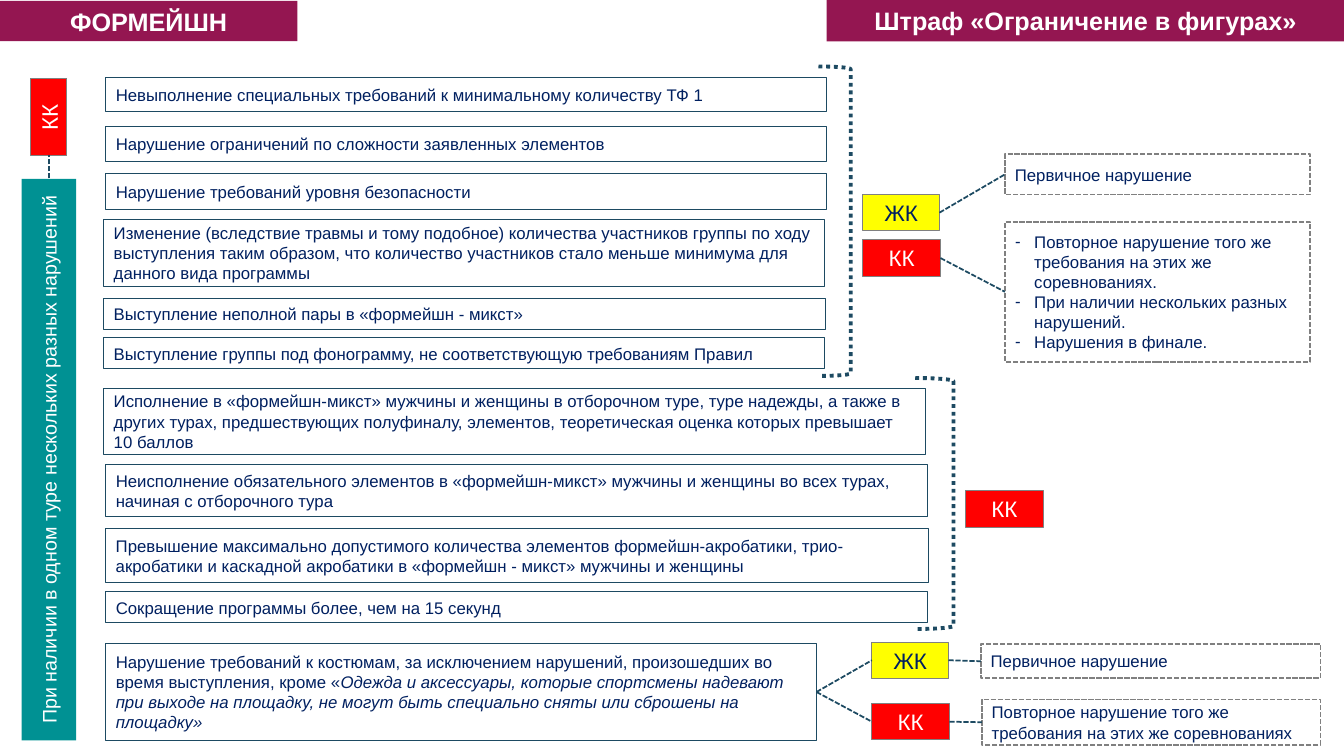
from pptx import Presentation
from pptx.dml.color import RGBColor
from pptx.enum.dml import MSO_LINE_DASH_STYLE as DASH
from pptx.enum.shapes import MSO_CONNECTOR as CONN, MSO_SHAPE as SHAPE
from pptx.enum.text import MSO_ANCHOR as ANCHOR, MSO_AUTO_SIZE as FIT, PP_ALIGN as ALIGN
from pptx.oxml.ns import qn
from pptx.util import Emu, Pt
from lxml.etree import SubElement

PX = 9144  # 100 px to the inch
THEME = {
    "font": "Arial", "navy": "002060", "white": "FFFFFF", "plum": "941651",
    "teal": "009193", "red": "FF0000", "yellow": "FFFF00",
    "ink": "1D4A62", "grey": "808080",
    "heading": 18, "card": 16, "side": 14, "text": 12,
    "thin": 0.75, "dashed": 1.25, "dotted": 2.75,
}
CENTER, LEFT = ALIGN.CENTER, ALIGN.LEFT
# fill, outline, outline width, dash, text colour, text size, bold, alignment
STYLES = {
    "heading": ("plum", None, None, None, "white", "heading", True, CENTER),
    "side": ("teal", None, None, None, "white", "side", False, CENTER),
    "red": ("red", "grey", "thin", None, "white", "card", False, CENTER),
    "yellow": ("yellow", "grey", "thin", None, "navy", "card", False, CENTER),
    "rule": (None, "ink", "thin", None, "navy", "text", False, LEFT),
    "note": (None, "grey", "dashed", DASH.SQUARE_DOT, "navy", "text", False, LEFT),
    "bracket": (None, "ink", "dotted", DASH.ROUND_DOT, "navy", "text", False, LEFT),
}

prs = Presentation()
prs.slide_width, prs.slide_height = Emu(12192000), Emu(6858000)
slide = prs.slides.add_slide(prs.slide_layouts[1])
shapes = slide.shapes


def rgb(name):
    return RGBColor.from_string(THEME[name])


def box(style, at, paragraphs=(), s=None, kind=SHAPE.RECTANGLE):
    """Place a shape or placeholder; each paragraph is a list of (text, italic)."""
    left, top, width, height = [Emu(v * PX) for v in at]
    if s is None:
        s = shapes.add_shape(kind, left, top, width, height)
        s.shadow.inherit = False
    s.left, s.top, s.width, s.height = left, top, width, height
    fill, line, weight, dash, colour, size, bold, align = STYLES[style]
    if fill:
        s.fill.solid()
        s.fill.fore_color.rgb = rgb(fill)
    else:
        s.fill.background()
    if line:
        s.line.color.rgb = rgb(line)
        s.line.width = Pt(THEME[weight])
        if dash:
            s.line.dash_style = dash
    else:
        s.line.fill.background()
    tf = s.text_frame
    tf.word_wrap, tf.auto_size, tf.vertical_anchor = True, FIT.NONE, ANCHOR.MIDDLE
    for i, runs in enumerate(paragraphs):
        p = tf.add_paragraph() if i else tf.paragraphs[0]
        p.alignment = align
        p.space_before = Pt(0)
        for text, italic in runs:
            r = p.add_run()
            r.text = text
            looks = {"name": THEME["font"], "size": Pt(THEME[size]), "bold": bold, "italic": italic}
            for key, value in looks.items():
                setattr(r.font, key, value)
            r.font.color.rgb = rgb(colour)
    return s


# Headings
box("heading", (820, 0, 514, 41), [[("Штраф «Ограничение в фигурах»", False)]], shapes.title)
box("heading", (0, 1, 295, 40), [[("ФОРМЕЙШН", False)]])

# Violations
violations = [
    ((105, 77, 715, 34), "Невыполнение специальных требований к минимальному количеству ТФ 1"),
    ((105, 126, 715, 34), "Нарушение ограничений по сложности заявленных элементов"),
    ((105, 172, 715, 36), "Нарушение требований уровня безопасности"),
    ((103, 218, 715, 66), "Изменение (вследствие травмы и тому подобное) количества участников группы по ходу "
     "выступления таким образом, что количество участников стало меньше минимума для данного вида программы"),
    ((103, 296, 716, 31), "Выступление неполной пары в «формейшн - микст»"),
    ((103, 335, 715, 31), "Выступление группы под фонограмму, не соответствующую требованиям Правил"),
    ((103, 385, 815, 66), "Исполнение в «формейшн-микст» мужчины и женщины в отборочном туре, туре надежды, "
     "а также в других турах, предшествующих полуфиналу, элементов, теоретическая оценка которых "
     "превышает 10 баллов"),
    ((105, 461, 815, 51), "Неисполнение обязательного элементов в «формейшн-микст» мужчины и женщины "
     "во всех турах, начиная с отборочного тура"),
    ((105, 524, 816, 54), "Превышение максимально допустимого количества элементов формейшн-акробатики, "
     "трио-акробатики и каскадной акробатики в «формейшн - микст» мужчины и женщины"),
    ((105, 587, 815, 31), "Сокращение программы более, чем на 15 секунд"),
]
for at, text in violations:
    box("rule", at, [[(text, False)]])
costume = box("rule", (105, 638, 705, 97), [[
    ("Нарушение требований к костюмам, за исключением нарушений, произошедших во время "
     "выступления, кроме «", False),
    ("Одежда и аксессуары, которые спортсмены надевают при выходе на площадку, не могут быть "
     "специально сняты или сброшены на площадку»", True)]])

# Group brackets
for at in ((812, 66, 32, 307), (908, 375, 38, 249)):
    box("bracket", at, kind=SHAPE.RIGHT_BRACKET)

# Yellow and red cards
yellow_top, yellow_costume = [
    box("yellow", (left, top, 76, 36), [[("ЖК", False)]]) for left, top in ((856, 193), (865, 637))]
red_top, red_costume, red_group, red_side = [
    box("red", (left, top, 77, 36), [[("КК", False)]])
    for left, top in ((856, 238), (865, 698), (958, 487), (10, 98))]

# Side label
side = box("side", (-230, 429, 557, 54), [[("При наличии в одном туре нескольких разных нарушений", False)]])
red_side.rotation = side.rotation = 270

# Notes on first and repeated violations
first_top, first_costume = [
    box("note", at, [[("Первичное нарушение", False)]])
    for at in ((997, 153, 303, 40), (973, 639, 337, 34))]
repeat_costume = box("note", (974, 694, 336, 45),
                     [[("Повторное нарушение того же требования на этих же соревнованиях", False)]])
repeat_list = box("note", (997, 220, 303, 139), [
    [("Повторное нарушение того же требования на этих же соревнованиях.", False)],
    [("При наличии нескольких разных нарушений.", False)],
    [("Нарушения в финале.", False)]], slide.placeholders[1])
for p in repeat_list.text_frame.paragraphs:
    pPr = p._p.get_or_add_pPr()
    pPr.set("marL", str(19 * PX))
    pPr.set("indent", str(-19 * PX))
    SubElement(pPr, qn("a:buChar")).set("char", "-")

# Dashed links, joined at side middles (0 top, 1 left, 2 bottom, 3 right)
links = [
    (costume, 3, yellow_costume, 1), (costume, 3, red_costume, 1),
    (yellow_costume, 3, first_costume, 1), (red_costume, 3, repeat_costume, 1),
    (yellow_top, 3, first_top, 1), (red_top, 3, repeat_list, 1),
    (side, 3, red_side, 1),
]
for start, start_side, end, end_side in links:
    link = shapes.add_connector(CONN.STRAIGHT, 0, 0, 0, 0)
    link.begin_connect(start, start_side)
    link.end_connect(end, end_side)
    link.line.color.rgb = rgb("ink")
    link.line.width = Pt(THEME["dashed"])
    link.line.dash_style = DASH.SQUARE_DOT
    SubElement(link._element.spPr, qn("a:effectLst"))

# The turned side shapes meet on a vertical link
link.begin_x = link.end_x = Emu(49 * PX)
link.begin_y, link.end_y = Emu(177 * PX), Emu(154 * PX)

prs.save("out.pptx")
